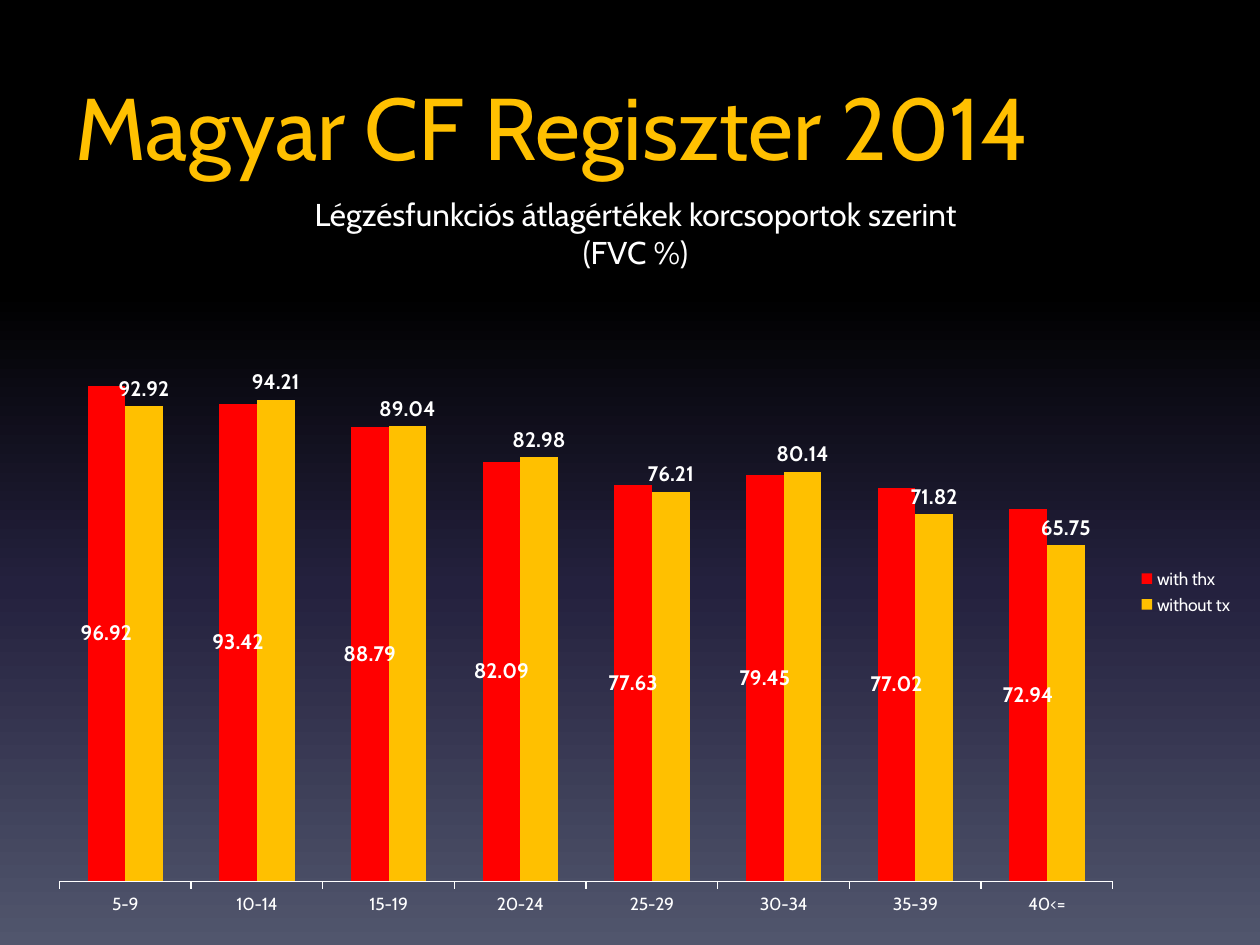
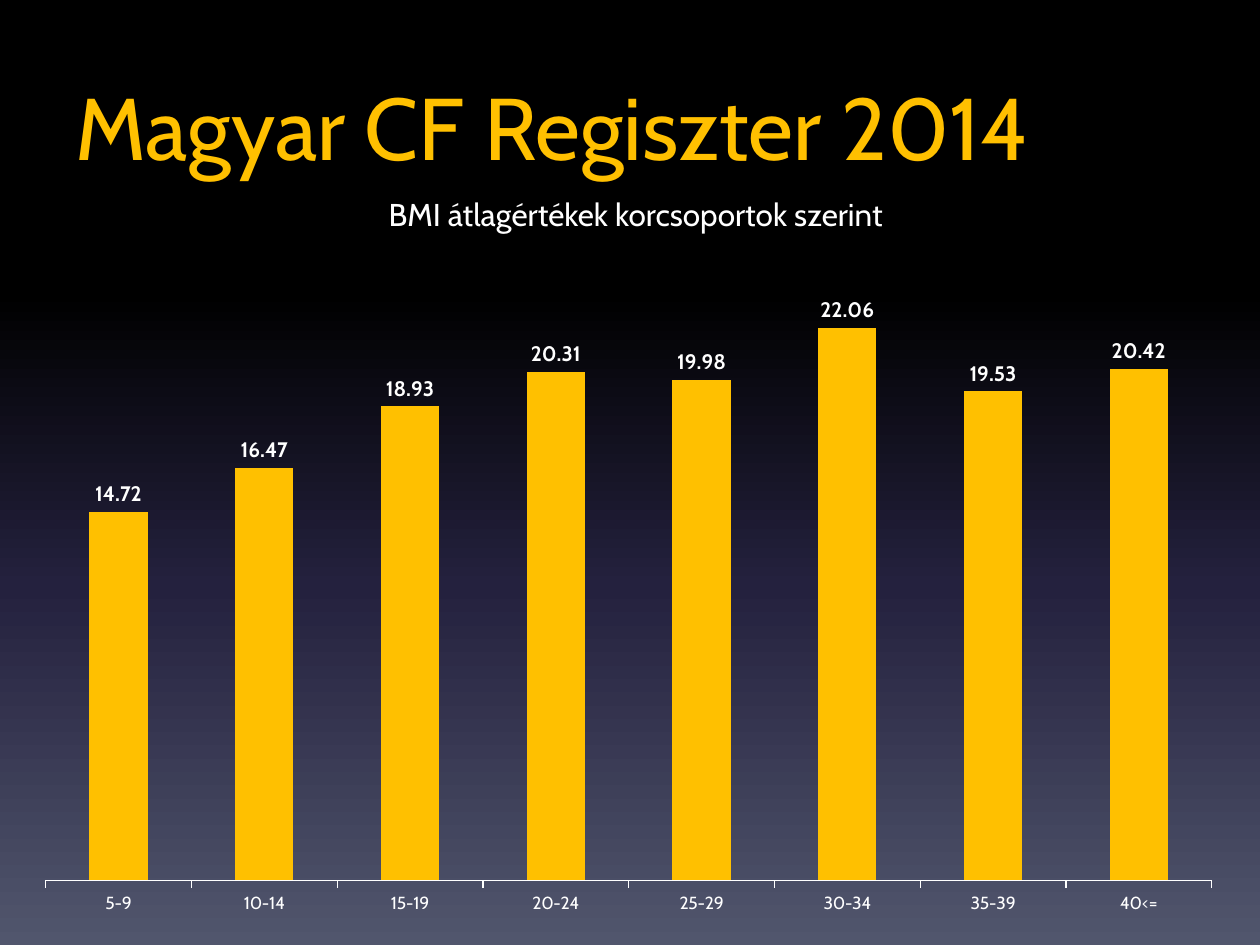
from pptx import Presentation
from pptx.chart.data import CategoryChartData
from pptx.dml.color import RGBColor
from pptx.enum.chart import XL_CHART_TYPE, XL_LABEL_POSITION, XL_LEGEND_POSITION, XL_TICK_MARK
from pptx.enum.text import MSO_ANCHOR, PP_ALIGN
from pptx.oxml import parse_xml
from pptx.oxml.ns import nsdecls
from pptx.util import Inches, Pt

FONT = "Cabin"
WHITE = RGBColor(0xFF, 0xFF, 0xFF)
GOLD = RGBColor(0xFF, 0xC0, 0x00)
RED = RGBColor(0xFF, 0x00, 0x00)
BLACK = RGBColor(0x00, 0x00, 0x00)
NIGHT = RGBColor(0x24, 0x21, 0x3E)
SLATE = RGBColor(0x51, 0x56, 0x6D)
SKY_STOPS = [(0, BLACK), (31, BLACK), (62, NIGHT), (100, SLATE)]

AGE_GROUPS = ["5-9", "10-14", "15-19", "20-24", "25-29", "30-34", "35-39", "40<="]
CENTER, ABOVE = XL_LABEL_POSITION.CENTER, XL_LABEL_POSITION.OUTSIDE_END

# Per slide: subtitle, its height, chart box, plot width share, axis maximum, series
PAGES = [
    ("Légzésfunkciós átlagértékek korcsoportok szerint (FVC %)", 0.71,
     (0.28, 2.02, 9.61, 5.35), 0.87, 120,
     [("with thx", RED, CENTER, [96.92, 93.42, 88.79, 82.09, 77.63, 79.45, 77.02, 72.94]),
      ("without tx", GOLD, ABOVE, [92.92, 94.21, 89.04, 82.98, 76.21, 80.14, 71.82, 65.75])]),
    ("BMI átlagértékek korcsoportok szerint", 0.4,
     (0.17, 1.91, 9.64, 5.46), 0.96, 25,
     [("Series 1", GOLD, ABOVE, [14.72, 16.47, 18.93, 20.31, 19.98, 22.06, 19.53, 20.42])]),
]


def add_text(slide, text, box, size, color, align, top_inset):
    frame = slide.shapes.add_textbox(*map(Inches, box)).text_frame
    frame.word_wrap = True
    frame.vertical_anchor = MSO_ANCHOR.TOP
    frame.margin_top = Inches(top_inset)
    paragraph = frame.paragraphs[0]
    paragraph.alignment = align
    run = paragraph.add_run()
    run.text = text
    set_font(run.font, size, color)


def set_font(font, size, color, bold=False):
    font.name, font.size, font.bold = FONT, Pt(size), bold
    font.color.rgb = color


prs = Presentation()
prs.slide_width, prs.slide_height = Inches(10), Inches(7.5)

for subtitle, subtitle_height, chart_box, plot_width, axis_max, measures in PAGES:
    slide = prs.slides.add_slide(prs.slide_layouts[6])

    # Night-sky gradient background
    stops = "".join(f'<a:gs pos="{pos * 1000}"><a:srgbClr val="{color}"/></a:gs>'
                    for pos, color in SKY_STOPS)
    slide.element.cSld.insert(0, parse_xml(
        f'<p:bg {nsdecls("p", "a")}><p:bgPr><a:gradFill rotWithShape="1">'
        f'<a:gsLst>{stops}</a:gsLst><a:lin ang="5400000" scaled="0"/></a:gradFill>'
        '<a:effectLst/></p:bgPr></p:bg>'))

    # Title and subtitle
    add_text(slide, "Magyar CF Regiszter 2014", (0.5, 0.5, 9, 1.25), 50, GOLD,
             PP_ALIGN.LEFT, 0.08)
    add_text(slide, subtitle, (2.26, 1.5, 5.57, subtitle_height), 18, WHITE,
             PP_ALIGN.CENTER, 0.05)

    # Averages by age group
    averages = CategoryChartData(number_format="General")
    averages.categories = AGE_GROUPS
    for name, _, _, values in measures:
        averages.add_series(name, values)
    chart = slide.shapes.add_chart(XL_CHART_TYPE.COLUMN_CLUSTERED,
                                   *map(Inches, chart_box), averages).chart
    set_font(chart.font, 10, WHITE)
    chart.has_title = False
    chart.has_legend = len(measures) > 1
    if chart.has_legend:
        chart.legend.position = XL_LEGEND_POSITION.RIGHT
        chart.legend.include_in_layout = False
        set_font(chart.legend.font, 10, WHITE)

    # Columns and their value labels
    columns = chart.plots[0]
    columns.gap_width, columns.overlap, columns.vary_by_categories = 150, 0, False
    for series, (_, color, position, _) in zip(columns.series, measures):
        series.format.fill.solid()
        series.format.fill.fore_color.rgb = color
        labels = series.data_labels
        labels.show_value = True
        labels.position = position
        set_font(labels.font, 12, WHITE, bold=True)

    # Axes
    age_axis, value_axis = chart.category_axis, chart.value_axis
    age_axis.major_tick_mark = XL_TICK_MARK.OUTSIDE
    age_axis.format.line.color.rgb = WHITE
    set_font(age_axis.tick_labels.font, 10, WHITE)
    value_axis.visible = False
    value_axis.has_major_gridlines = False
    value_axis.minimum_scale, value_axis.maximum_scale = 0, axis_max

    # Fixed plot area inside the chart
    plot_area = columns._element.getparent()
    for old_layout in plot_area.findall("{*}layout"):
        plot_area.remove(old_layout)
    plot_area.insert(0, parse_xml(
        f'<c:layout {nsdecls("c")}><c:manualLayout><c:layoutTarget val="inner"/>'
        '<c:xMode val="edge"/><c:yMode val="edge"/><c:x val="0.02"/><c:y val="0.02"/>'
        f'<c:w val="{plot_width}"/><c:h val="0.91"/></c:manualLayout></c:layout>'))

prs.save("out.pptx")
